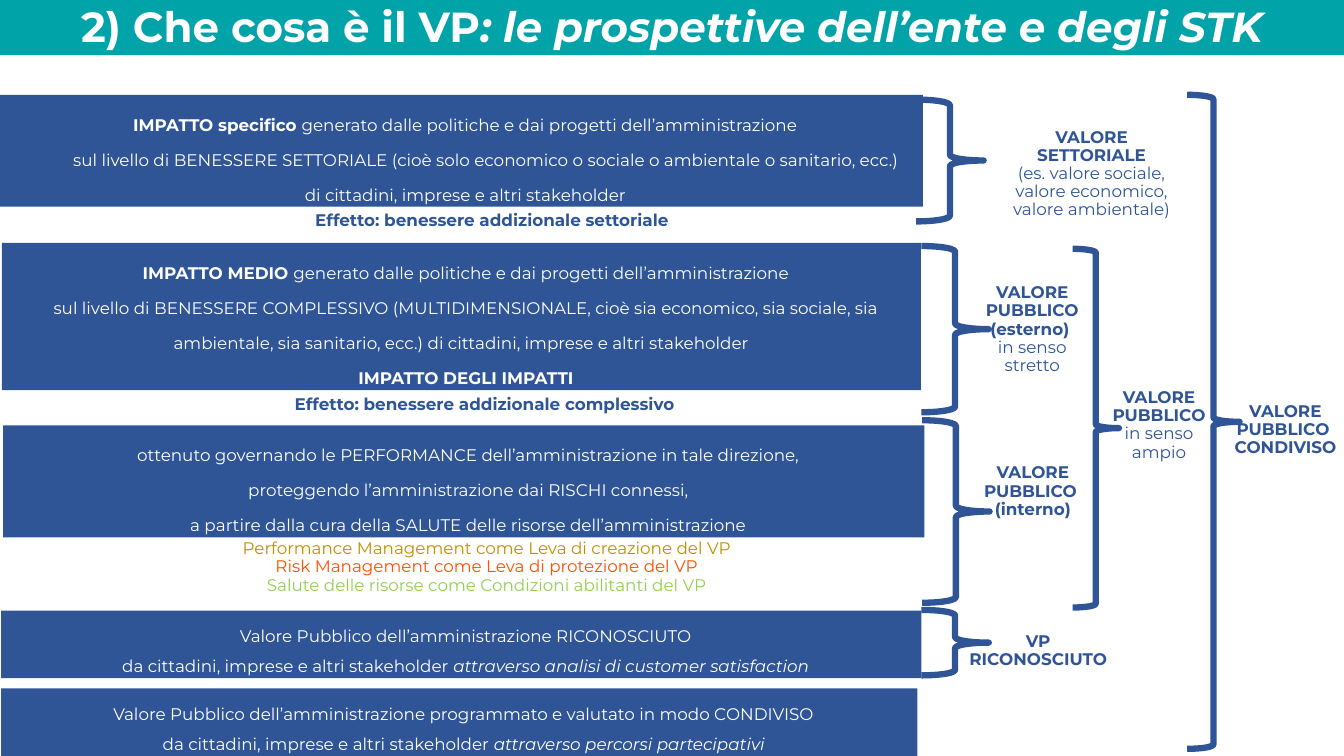
from dataclasses import dataclass

from pptx import Presentation
from pptx import util as u
from pptx.dml.color import RGBColor
from pptx.enum import shapes, text


@dataclass(frozen=True)
class Theme:
    font: str = "Montserrat"
    blue: str = "2F5597"
    teal: str = "00A3A8"
    white: str = "FFFFFF"
    gold: str = "BF9000"
    orange: str = "FE5000"
    green: str = "92D050"
    body_size: float = 12
    title_size: float = 30
    brace_width: float = 4.5


THEME = Theme()
BOLD = {"bold": True}
ITALIC = {"italic": True}
TIGHT = 0.9
LOOSE = 1.5
WIDE = u.Pt(25)
LABEL_INDENT = 1.27
BOX_INDENT = 0.23


class SlideBuilder:
    def __init__(self, slide, theme):
        self.slide = slide
        self.theme = theme

    def fill_text(self, shape, paragraphs, color, size, spacing, margin=0, indent=0):
        """Add paragraphs, each a list of (text, run format) pairs."""
        frame = shape.text_frame
        frame.word_wrap = True
        for index, runs in enumerate(paragraphs):
            paragraph = frame.paragraphs[0] if index == 0 else frame.add_paragraph()
            settings = {"alignment": text.PP_ALIGN.CENTER, "line_spacing": spacing,
                        "level": 1 if margin else 0}
            for name, value in settings.items():
                setattr(paragraph, name, value)
            properties = paragraph._p.get_or_add_pPr()
            properties.set("marL", str(u.Cm(margin)))
            properties.set("indent", str(u.Cm(indent)))
            for words, run_format in runs:
                run = paragraph.add_run()
                run.text = words
                values = {"name": self.theme.font, "size": u.Pt(size), **run_format}
                run_color = values.pop("color", color)
                for name, value in values.items():
                    setattr(run.font, name, value)
                run.font.color.rgb = RGBColor.from_string(run_color)

    def shape(self, kind, left, top, width, height):
        shape = self.slide.shapes.add_shape(
            kind, u.Cm(left), u.Cm(top), u.Cm(width), u.Cm(height))
        shape.shadow.inherit = False
        return shape

    def bar(self, left, top, width, height, color):
        bar = self.shape(shapes.MSO_SHAPE.RECTANGLE, left, top, width, height)
        bar.fill.solid()
        bar.fill.fore_color.rgb = RGBColor.from_string(color)
        bar.line.fill.background()
        return bar

    def title(self, left, top, width, height, runs):
        bar = self.bar(left, top, width, height, self.theme.teal)
        bar.text_frame.vertical_anchor = text.MSO_ANCHOR.MIDDLE
        self.fill_text(bar, [runs], self.theme.white, self.theme.title_size, 1.0)

    def box(self, left, top, width, height, spacing, paragraphs):
        bar = self.bar(left, top, width, height, self.theme.blue)
        bar.text_frame.vertical_anchor = text.MSO_ANCHOR.TOP
        bar.text_frame.auto_size = text.MSO_AUTO_SIZE.SHAPE_TO_FIT_TEXT
        self.fill_text(bar, paragraphs, self.theme.white, self.theme.body_size,
                       spacing, indent=BOX_INDENT)

    def label(self, left, top, width, height, paragraphs, margin=LABEL_INDENT, inset=0.25):
        label = self.slide.shapes.add_textbox(
            u.Cm(left), u.Cm(top), u.Cm(width), u.Cm(height))
        frame = label.text_frame
        frame.auto_size = text.MSO_AUTO_SIZE.SHAPE_TO_FIT_TEXT
        frame.margin_left = frame.margin_right = u.Cm(inset)
        self.fill_text(label, paragraphs, self.theme.blue, self.theme.body_size,
                       TIGHT, margin)

    def brace(self, left, top, width, height):
        brace = self.shape(shapes.MSO_SHAPE.RIGHT_BRACE, left, top, width, height)
        brace.fill.background()
        brace.line.color.rgb = RGBColor.from_string(self.theme.blue)
        brace.line.width = u.Pt(self.theme.brace_width)


def lines(*texts, **run_format):
    return [[(words, run_format)] for words in texts]


BOXES = [
    (-0.03, 2.39, 23.29, 2.82, WIDE, [
        [("IMPATTO specifico ", BOLD),
         ("generato dalle politiche e dai progetti dell’amministrazione", {})],
        *lines("\tsul livello di BENESSERE SETTORIALE (cioè solo economico o sociale "
               "o ambientale o sanitario, ecc.)",
               "di cittadini, imprese e altri stakeholder")]),
    (0.05, 6.12, 23.16, 3.71, WIDE, [
        [("IMPATTO MEDIO ", BOLD),
         ("generato dalle politiche e dai progetti dell’amministrazione", {})],
        *lines("sul livello di BENESSERE COMPLESSIVO (MULTIDIMENSIONALE, cioè sia "
               "economico, sia sociale, sia ambientale, sia sanitario, ecc.) di "
               "cittadini, imprese e altri stakeholder"),
        *lines("IMPATTO DEGLI IMPATTI", **BOLD)]),
    (0.08, 10.72, 23.22, 2.82, WIDE, lines(
        "ottenuto governando le PERFORMANCE dell’amministrazione in tale direzione,",
        "proteggendo l’amministrazione dai RISCHI connessi,",
        "a partire dalla cura della SALUTE delle risorse dell’amministrazione")),
    (0.03, 15.39, 23.19, 1.7, LOOSE, [
        *lines("Valore Pubblico dell’amministrazione RICONOSCIUTO"),
        [("da cittadini, imprese e altri stakeholder ", {}),
         ("attraverso analisi di customer satisfaction", ITALIC)]]),
    (0.03, 17.35, 23.09, 1.7, LOOSE, [
        *lines("Valore Pubblico dell’amministrazione programmato e valutato "
               "in modo CONDIVISO"),
        [("da cittadini, imprese e altri stakeholder ", {}),
         ("attraverso percorsi partecipativi", ITALIC)]]),
]

EFFECTS = [
    (0.13, 5.21, 23.27, 0.71, lines("Effetto: benessere addizionale settoriale", **BOLD)),
    (-0.03, 9.86, 23.22, 0.71, lines("Effetto: benessere addizionale complessivo", **BOLD)),
    (0, 13.49, 23.27, 1.65, [
        *lines("Performance Management come Leva di creazione del VP", color=THEME.gold),
        *lines("Risk Management come Leva di protezione del VP", color=THEME.orange),
        *lines("Salute delle risorse come Condizioni abilitanti del VP", color=THEME.green)]),
]

VALUES = [
    (23.98, 3.12, 5.79, 2.57, [
        *lines("VALORE", "SETTORIALE", **BOLD),
        *lines("(es. valore sociale,", "valore economico, valore ambientale)")]),
    (22.99, 7.04, 4.78, 2.57, [
        *lines("VALORE", "PUBBLICO", "(esterno) ", **BOLD),
        *lines("in senso stretto")]),
    (23.06, 11.58, 4.67, 1.65, lines("VALORE", "PUBBLICO ", "(interno)", **BOLD)),
    (26.49, 9.68, 4.17, 2.11, [
        *lines("VALORE", "PUBBLICO ", **BOLD),
        *lines("in senso ampio")]),
    (22.71, 15.82, 5.64, 1.17, lines("VP", "RICONOSCIUTO", **BOLD)),
]

BRACES = [
    (23.09, 2.51, 1.7, 3.07),
    (23.22, 6.2, 1.7, 4.19),
    (23.24, 10.59, 1.7, 4.6),
    (23.22, 15.37, 1.7, 1.65),
    (27.03, 6.27, 1.17, 9.04),
    (29.92, 2.39, 1.32, 16.48),
]


def main():
    presentation = Presentation()
    presentation.slide_width = u.Cm(33.87)
    presentation.slide_height = u.Cm(19.05)
    slide = presentation.slides.add_slide(presentation.slide_layouts[6])
    builder = SlideBuilder(slide, THEME)

    for box in BOXES:
        builder.box(*box)
    for effect in EFFECTS:
        builder.label(*effect, inset=0.1)
    for brace in BRACES:
        builder.brace(*brace)
    for value in VALUES:
        builder.label(*value)
    builder.label(30.63, 10.03, 3.53, 1.65,
                  lines("VALORE", "PUBBLICO ", "CONDIVISO", **BOLD), margin=0)
    builder.title(0, -0.08, 33.87, 1.47, [
        ("2) Che cosa è il VP", BOLD),
        (": le prospettive dell’ente e degli STK", {**BOLD, **ITALIC})])

    presentation.save("out.pptx")


if __name__ == "__main__":
    main()
